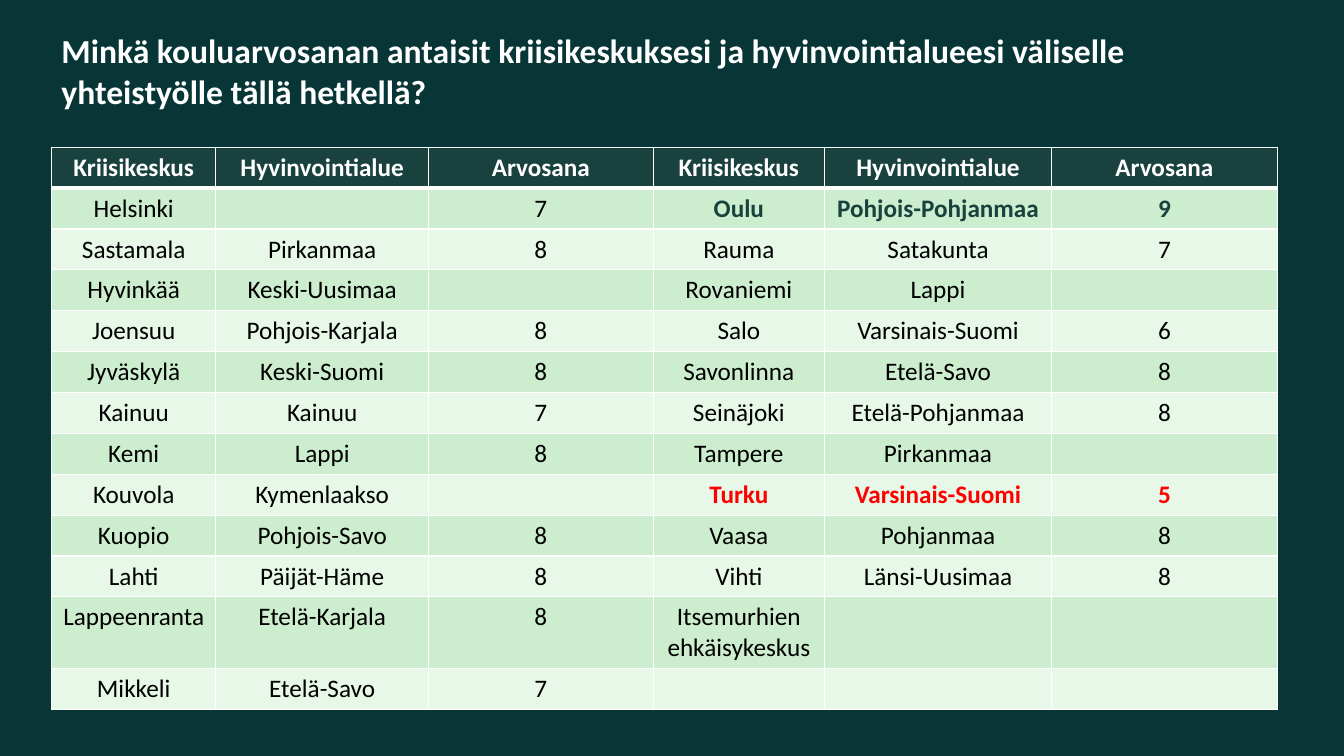
from lxml.etree import SubElement as Sub
from pptx import Presentation
from pptx.dml.color import RGBColor as RGB
from pptx.enum.text import PP_ALIGN as Align
from pptx.oxml.ns import qn
from pptx.util import Cm, Pt

DARK = RGB(0x08, 0x35, 0x35)
GREEN = RGB(0x19, 0x41, 0x3D)
MINT = RGB(0xCC, 0xEE, 0xCE)
PALE = RGB(0xE7, 0xF7, 0xE8)
WHITE = RGB(0xFF, 0xFF, 0xFF)
BLACK = RGB(0x00, 0x00, 0x00)
RED = RGB(0xFF, 0x00, 0x00)

TITLE = ("Minkä kouluarvosanan antaisit kriisikeskuksesi ja "
         "hyvinvointialueesi väliselle yhteistyölle tällä hetkellä?")
HEAD = ["Kriisikeskus", "Hyvinvointialue", "Arvosana"]
LEFT = [
    ("Helsinki", "", "7"),
    ("Sastamala", "Pirkanmaa", "8"),
    ("Hyvinkää", "Keski-Uusimaa", ""),
    ("Joensuu", "Pohjois-Karjala", "8"),
    ("Jyväskylä", "Keski-Suomi", "8"),
    ("Kainuu", "Kainuu", "7"),
    ("Kemi", "Lappi", "8"),
    ("Kouvola", "Kymenlaakso", ""),
    ("Kuopio", "Pohjois-Savo", "8"),
    ("Lahti", "Päijät-Häme", "8"),
    ("Lappeenranta", "Etelä-Karjala", "8"),
    ("Mikkeli", "Etelä-Savo", "7"),
]
RIGHT = [
    ("Oulu", "Pohjois-Pohjanmaa", "9"),
    ("Rauma", "Satakunta", "7"),
    ("Rovaniemi", "Lappi", ""),
    ("Salo", "Varsinais-Suomi", "6"),
    ("Savonlinna", "Etelä-Savo", "8"),
    ("Seinäjoki", "Etelä-Pohjanmaa", "8"),
    ("Tampere", "Pirkanmaa", ""),
    ("Turku", "Varsinais-Suomi", "5"),
    ("Vaasa", "Pohjanmaa", "8"),
    ("Vihti", "Länsi-Uusimaa", "8"),
    ("Itsemurhien ehkäisykeskus", "", ""),
    ("", "", ""),
]
WIDTHS = [4.14, 5.36, 5.66, 4.32, 5.72, 5.69]
MARKS = {"Oulu": GREEN, "Turku": RED}


class Page:
    """Draws styled elements on one slide."""

    def __init__(self, slide, face="Calibri"):
        self.slide = slide
        self.face = face
        fill = slide.background.fill
        fill.solid()
        fill.fore_color.rgb = DARK

    def style(self, para, size, color, bold):
        for run in para.runs:
            font = run.font
            font.name, font.size, font.bold = self.face, Pt(size), bold
            font.color.rgb = color

    def title(self, text, left, top, width, height):
        box = self.slide.shapes.add_textbox(
            Cm(left), Cm(top), Cm(width), Cm(height))
        frame = box.text_frame
        frame.word_wrap = True
        frame.text = text
        self.style(frame.paragraphs[0], 24, WHITE, True)

    def edge(self, cell, side, width):
        props = cell._tc.get_or_add_tcPr()
        line = Sub(props, qn("a:ln" + side), w=str(Pt(width)))
        Sub(Sub(line, qn("a:solidFill")), qn("a:srgbClr"), val=str(WHITE))

    def cell(self, cell, text, fill, color, bold, top, base):
        for side, width in zip("LRTB", (1, 1, top, base)):
            self.edge(cell, side, width)
        cell.fill.solid()
        cell.fill.fore_color.rgb = fill
        cell.text_frame.text = text
        para = cell.text_frame.paragraphs[0]
        para.alignment = Align.CENTER
        self.style(para, 18, color, bold)

    def table(self, rows, left, top, widths, height):
        grid = self.slide.shapes.add_table(
            len(rows), len(widths), Cm(left), Cm(top),
            Cm(sum(widths)), Cm(height * len(rows))).table
        for col, width in zip(grid.columns, widths):
            col.width = Cm(width)
        for r, row in enumerate(rows):
            grid.rows[r].height = Cm(height)
            fill = GREEN if r == 0 else MINT if r % 2 else PALE
            for c, text in enumerate(row):
                mark = MARKS.get(row[c - c % 3])
                color = WHITE if r == 0 else mark or BLACK
                self.cell(grid.cell(r, c), text, fill, color,
                          r == 0 or mark is not None,
                          3 if r == 1 else 1, 3 if r == 0 else 1)


def main():
    deck = Presentation()
    deck.slide_width, deck.slide_height = Cm(33.87), Cm(19.05)
    page = Page(deck.slides.add_slide(deck.slide_layouts[6]))
    rows = [HEAD * 2] + [a + b for a, b in zip(LEFT, RIGHT)]
    page.table(rows, 1.3, 3.71, WIDTHS, 1.03)
    page.title(TITLE, 1.3, 0.64, 30, 3.07)
    deck.save("out.pptx")


if __name__ == "__main__":
    main()
